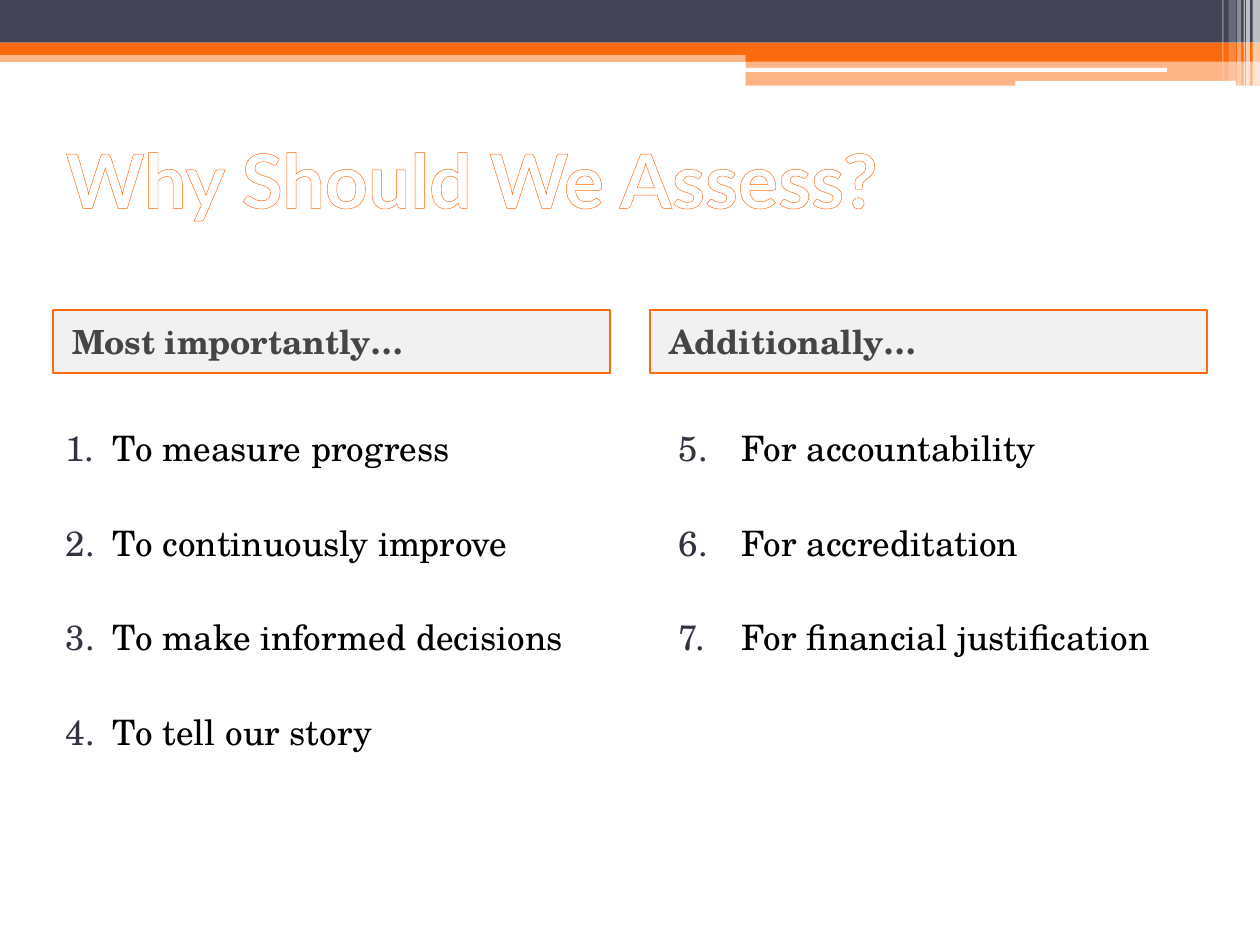
"""Build the assessment slide with two headed, numbered lists."""
import lxml.etree
import pptx
import pptx.dml.color
import pptx.enum.shapes
import pptx.enum.text
import pptx.oxml.ns
import pptx.util

Cm = pptx.util.Cm
Pt = pptx.util.Pt
RGBColor = pptx.dml.color.RGBColor
qn = pptx.oxml.ns.qn

ORANGE = RGBColor(0xFC, 0x6A, 0x10)
OUTLINE = RGBColor(0xFF, 0x62, 0x01)
SLATE = RGBColor(0x42, 0x44, 0x56)
WHITE = RGBColor(0xFF, 0xFF, 0xFF)
BLACK = RGBColor(0, 0, 0)
GREY = RGBColor(0xC8, 0xC8, 0xC8)
HEADING = RGBColor(0x45, 0x45, 0x45)
NUMBER = RGBColor(0x31, 0x33, 0x40)
TITLE_FONT, BODY_FONT = "Lato", "TeX Gyre Schola"

TITLE = "Why Should We Assess?"
COLUMNS = [
    {"heading": "Most importantly…", "start": 1, "margin": 0.95, "hanging": 0.95,
     "items": ["To measure progress", "To continuously improve",
               "To make informed decisions", "To tell our story"]},
    {"heading": "Additionally…", "start": 5, "margin": 1.59, "hanging": 1.27,
     "items": ["For accountability", "For accreditation",
               "For financial justification"]},
]
BANDS = [
    (0, 1.02, 25.4, 0.23, ORANGE, 50),
    (0, 0, 25.4, 0.86, SLATE, 100),
    (0, 0.86, 25.4, 0.25, ORANGE, 100),
    (15.03, 0.99, 10.37, 0.25, ORANGE, 100),
    (15.03, 1.23, 10.37, 0.5, ORANGE, 50),
]
ROUNDED_LINES = [
    (15.02, 1.37, 8.51, 0.08, WHITE, 100),
    (20.47, 1.63, 4.45, 0.1, WHITE, 100),
]
STRIPES = [
    (25.25, 0.15, 1.73, 65), (25.12, 0.08, 1.73, 65), (25.07, 0.03, 1.73, 60),
    (24.94, 0.08, 1.73, 40), (24.77, 0.15, 1.63, 20), (24.64, 0.03, 1.63, 30),
]
LEFT, COLUMN_WIDTH, COLUMN_STEP = 1.07, 11.23, 12.04
HEADING_TOP, HEADING_HEIGHT, LIST_HEIGHT = 6.25, 1.27, 8.76


def fill_shape(shape, color, opacity):
    shape.fill.solid()
    shape.fill.fore_color.rgb = color
    if opacity < 100:
        solid = shape._element.spPr.find(qn("a:solidFill"))
        alpha = lxml.etree.SubElement(solid.find(qn("a:srgbClr")), qn("a:alpha"))
        alpha.set("val", str(opacity * 1000))


def add_bar(slide, preset, left, top, width, height, color, opacity):
    shape = slide.shapes.add_shape(preset, Cm(left), Cm(top), Cm(width), Cm(height))
    shape.shadow.inherit = False
    shape.line.fill.background()
    fill_shape(shape, color, opacity)


def place(shape, left, top, width, height, anchor):
    shape.left, shape.top = Cm(left), Cm(top)
    shape.width, shape.height = Cm(width), Cm(height)
    frame = shape.text_frame
    frame.auto_size = pptx.enum.text.MSO_AUTO_SIZE.NONE
    frame.vertical_anchor = anchor
    return frame


def write(paragraph, text, font, size, color, bold, space_before):
    paragraph.alignment = pptx.enum.text.PP_ALIGN.LEFT
    paragraph.space_before = Pt(space_before)
    run = paragraph.add_run()
    run.text = text
    run.font.name, run.font.size, run.font.bold = font, Pt(size), bold
    run.font.color.rgb = color
    return run


def indent(paragraph, margin, hanging):
    properties = paragraph._p.get_or_add_pPr()
    properties.set("marL", str(Cm(margin)))
    properties.set("indent", str(-Cm(hanging)))
    return properties


def number(paragraph, column):
    properties = indent(paragraph, column["margin"], column["hanging"])
    color = lxml.etree.SubElement(properties, qn("a:buClr"))
    lxml.etree.SubElement(color, qn("a:srgbClr")).set("val", str(NUMBER))
    lxml.etree.SubElement(properties, qn("a:buFont")).set("typeface", BODY_FONT)
    numbering = lxml.etree.SubElement(properties, qn("a:buAutoNum"))
    numbering.set("type", "arabicPeriod")
    numbering.set("startAt", str(column["start"]))


def add_title(slide):
    middle = pptx.enum.text.MSO_ANCHOR.MIDDLE
    frame = place(slide.shapes.title, LEFT, 2.11, 23.29, 2.97, middle)
    run = write(frame.paragraphs[0], TITLE, TITLE_FONT, 43, WHITE, True, 0)
    outline = lxml.etree.Element(qn("a:ln"), w=str(Pt(1)))
    solid = lxml.etree.SubElement(outline, qn("a:solidFill"))
    lxml.etree.SubElement(solid, qn("a:srgbClr")).set("val", str(OUTLINE))
    run.font._element.insert(0, outline)


def add_column(heading, body, left, column):
    frame = place(heading, left, HEADING_TOP, COLUMN_WIDTH, HEADING_HEIGHT,
                  pptx.enum.text.MSO_ANCHOR.MIDDLE)
    fill_shape(heading, GREY, 25)
    heading.line.color.rgb = ORANGE
    heading.line.width = Pt(1)
    paragraph = frame.paragraphs[0]
    write(paragraph, column["heading"], BODY_FONT, 19, HEADING, True, 3)
    indent(paragraph, 0.13, 0)

    frame = place(body, left, HEADING_TOP + HEADING_HEIGHT, COLUMN_WIDTH,
                  LIST_HEIGHT, pptx.enum.text.MSO_ANCHOR.TOP)
    frame.margin_top = Cm(1.08)
    for index, item in enumerate(column["items"]):
        paragraph = frame.add_paragraph() if index else frame.paragraphs[0]
        write(paragraph, item, BODY_FONT, 20, BLACK, False, 30 if index else 0)
        number(paragraph, column)


def main():
    presentation = pptx.Presentation()
    presentation.slide_width, presentation.slide_height = Cm(25.4), Cm(19.05)
    slide = presentation.slides.add_slide(presentation.slide_layouts[4])
    presets = pptx.enum.shapes.MSO_SHAPE
    for band in BANDS:
        add_bar(slide, presets.RECTANGLE, *band)
    for line in ROUNDED_LINES:
        add_bar(slide, presets.ROUNDED_RECTANGLE, *line)
    for left, width, height, opacity in STRIPES:
        add_bar(slide, presets.RECTANGLE, left, 0, width, height, WHITE, opacity)
    add_title(slide)
    holders = {holder.placeholder_format.idx: holder for holder in slide.placeholders}
    for index, column in enumerate(COLUMNS):
        add_column(holders[2 * index + 1], holders[2 * index + 2],
                   LEFT + index * COLUMN_STEP, column)
    presentation.save("out.pptx")


if __name__ == "__main__":
    main()
